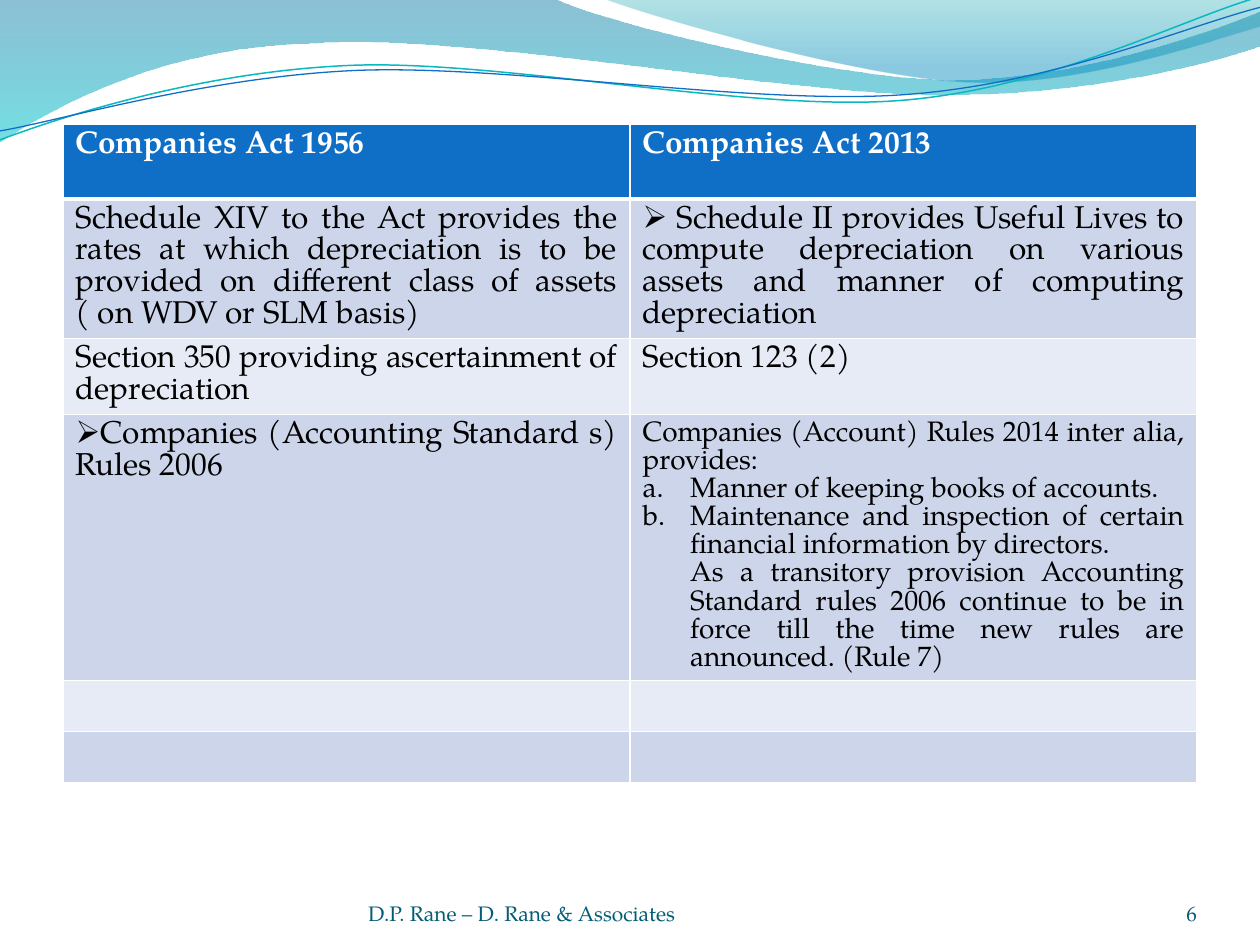
from dataclasses import dataclass
from typing import Optional

from lxml.etree import SubElement
from pptx import Presentation
from pptx.dml.color import RGBColor
from pptx.enum.text import MSO_ANCHOR as Anchor, PP_ALIGN as Align
from pptx.oxml.ns import qn
from pptx.util import Cm, Pt

FONT, BULLET_FONT = "TeX Gyre Pagella", "OpenSymbol"
BLUE, WHITE, BLACK, TEAL = "0F6FC6", "FFFFFF", "000000", "045D75"
BANDS = ("CCD5EA", "E7EBF5")


@dataclass
class Stop:
    position: float
    color: str
    opacity: int


@dataclass
class Wave:
    start: tuple
    segments: list
    stops: tuple = ()
    line_color: str = ""
    line_width: float = 0


@dataclass
class Entry:
    text: str
    size: float = 18
    bullet: Optional[str] = None
    numbering: Optional[str] = None
    margin: float = 0
    indent: float = 0


@dataclass
class Footer:
    text: str
    left: float
    width: float
    alignment: Align


WAVES = [
    Wave((0, 0), [
        [(11.18, -0.03)],
        [(12.09, 0.43), (16.87, 1.6), (19.25, 1.6)],
        [(21.67, 1.6), (24.33, 0.66), (25.4, 0.23)],
        [(25.43, 0.91)],
        [(24.97, 1.12), (22.1, 1.93), (18.95, 1.91)],
        [(15.8, 1.91), (9.7, 0.71), (6.53, 0.86)],
        [(3.28, 0.91), (1.17, 2.11), (-0.03, 2.87)],
        [(0, 0)],
    ], stops=(Stop(0, "0074A1", 45), Stop(1, "00C6CF", 55))),
    Wave((12.17, -0.03), [
        [(12.93, 0.28), (17.32, 1.57), (19.53, 1.65)],
        [(21.74, 1.75), (24.41, 0.81), (25.4, 0.53)],
        [(25.4, 0)],
        [(12.17, -0.03)],
    ], stops=(Stop(0, "00A1A9", 30), Stop(0.8, "008BBF", 45))),
    Wave((0, 2.82), [
        [(1.22, 2.36), (4.01, 1.45), (7.04, 1.32)],
        [(10.03, 1.19), (15.06, 2.26), (18.11, 2.03)],
        [(21.16, 1.8), (23.83, 0.38), (25.35, -0.05)],
    ], line_color="0AB8BF", line_width=0.85),
    Wave((0, 2.64), [
        [(1.19, 2.44), (4.17, 1.55), (7.19, 1.42)],
        [(10.24, 1.3), (15.16, 2.13), (18.21, 1.91)],
        [(21.23, 1.7), (23.9, 0.53), (25.4, 0.15)],
    ], line_color=BLUE, line_width=0.75),
]

LETTERED = dict(size=16, numbering="alphaLcPeriod", margin=0.96, indent=-0.96)
ROW_HEIGHTS = [1.5, 2.81, 1.53, 5.36, 1.03, 1.01]
ROWS = [
    [[Entry("Companies Act 1956")], [Entry("Companies Act 2013")]],
    [[Entry("Schedule XIV to the Act provides the rates at which depreciation is to be "
            "provided on different class of assets ( on WDV or SLM basis) ")],
     [Entry(" Schedule II provides Useful Lives to compute depreciation on various assets "
            "and manner of computing depreciation", bullet="➢")]],
    [[Entry("Section 350 providing ascertainment of depreciation")],
     [Entry("Section 123 (2)")]],
    [[Entry("Companies (Accounting Standard s) Rules 2006", bullet="➢")],
     [Entry("Companies (Account) Rules 2014 inter alia, provides:", size=16),
      Entry("Manner of keeping books of accounts.", **LETTERED),
      Entry("Maintenance and inspection of certain financial information by directors.",
            **LETTERED),
      Entry("As a transitory provision Accounting Standard rules 2006 continue to be in "
            "force till the time new rules are announced. (Rule 7)", size=16, margin=0.96)]],
    [[], []],
    [[], []],
]

FOOTERS = [
    Footer("D.P. Rane – D. Rane & Associates", 7.42, 9.32, Align.LEFT),
    Footer("6", 22.02, 2.11, Align.RIGHT),
]


def rgb(color: str) -> RGBColor:
    return RGBColor.from_string(color)


def bend_segments(shape, segments: list) -> None:
    path = next(shape._element.iter(qn("a:path")))
    for line, segment in zip(path.findall(qn("a:lnTo")), segments):
        if len(segment) == 1:
            continue
        curve = SubElement(path, qn("a:cubicBezTo"))
        for x, y in segment:
            SubElement(curve, qn("a:pt"), x=str(Cm(x) - shape.left), y=str(Cm(y) - shape.top))
        path.replace(line, curve)


def draw_wave(slide, wave: Wave) -> None:
    builder = slide.shapes.build_freeform(Cm(wave.start[0]), Cm(wave.start[1]), scale=1.0)
    ends = [(Cm(segment[-1][0]), Cm(segment[-1][1])) for segment in wave.segments]
    builder.add_line_segments(ends, close=bool(wave.stops))
    shape = builder.convert_to_shape()
    bend_segments(shape, wave.segments)
    shape.shadow.inherit = False
    if not wave.stops:
        shape.fill.background()
        shape.line.color.rgb = rgb(wave.line_color)
        shape.line.width = Pt(wave.line_width)
        return
    shape.line.fill.background()
    shape.fill.gradient()
    shape.fill.gradient_angle = 270
    for gradient_stop, stop in zip(shape.fill.gradient_stops, wave.stops):
        gradient_stop.position = stop.position
        gradient_stop.color.rgb = rgb(stop.color)
    for color, stop in zip(shape._element.iter(qn("a:srgbClr")), wave.stops):
        SubElement(color, qn("a:alpha"), val=str(stop.opacity * 1000))


def add_text(paragraph, text: str, size: float, color: str, bold: bool = False) -> None:
    run = paragraph.add_run()
    run.text = text
    run.font.name = FONT
    run.font.size = Pt(size)
    run.font.bold = bold
    run.font.color.rgb = rgb(color)


def format_list(paragraph, entry: Entry) -> None:
    properties = paragraph._p.get_or_add_pPr()
    properties.set("marL", str(Cm(entry.margin)))
    properties.set("indent", str(Cm(entry.indent)))
    if entry.bullet:
        SubElement(properties, qn("a:buFont"), typeface=BULLET_FONT)
        SubElement(properties, qn("a:buChar"), char=entry.bullet)
    elif entry.numbering:
        SubElement(properties, qn("a:buAutoNum"), type=entry.numbering)


def add_borders(cell, top: float, bottom: float) -> None:
    properties = cell._tc.get_or_add_tcPr()
    for side, width in (("L", 1), ("R", 1), ("T", top), ("B", bottom)):
        line = SubElement(properties, qn(f"a:ln{side}"), w=str(Pt(width)))
        SubElement(SubElement(line, qn("a:solidFill")), qn("a:srgbClr"), val=WHITE)


def draw_table(slide) -> None:
    table = slide.shapes.add_table(len(ROWS), 2, Cm(1.27), Cm(2.51), Cm(22.86),
                                   Cm(sum(ROW_HEIGHTS))).table
    for row_index, (height, contents) in enumerate(zip(ROW_HEIGHTS, ROWS)):
        table.rows[row_index].height = Cm(height)
        header = row_index == 0
        for column_index, entries in enumerate(contents):
            cell = table.cell(row_index, column_index)
            add_borders(cell, 3 if row_index == 1 else 1, 3 if header else 1)
            cell.fill.solid()
            cell.fill.fore_color.rgb = rgb(BLUE if header else BANDS[(row_index - 1) % 2])
            frame = cell.text_frame
            for entry_index, entry in enumerate(entries):
                paragraph = frame.add_paragraph() if entry_index else frame.paragraphs[0]
                paragraph.alignment = Align.JUSTIFY
                format_list(paragraph, entry)
                add_text(paragraph, entry.text, entry.size, WHITE if header else BLACK, header)


def draw_footer(slide, footer: Footer) -> None:
    frame = slide.shapes.add_textbox(Cm(footer.left), Cm(17.65), Cm(footer.width),
                                     Cm(1.02)).text_frame
    frame.word_wrap = True
    frame.vertical_anchor = Anchor.BOTTOM
    frame.margin_left = frame.margin_right = frame.margin_top = frame.margin_bottom = 0
    paragraph = frame.paragraphs[0]
    paragraph.alignment = footer.alignment
    add_text(paragraph, footer.text, 12, TEAL)


def main() -> None:
    presentation = Presentation()
    presentation.slide_width, presentation.slide_height = Cm(25.4), Cm(19.05)
    slide = presentation.slides.add_slide(presentation.slide_layouts[6])
    for wave in WAVES:
        draw_wave(slide, wave)
    draw_table(slide)
    for footer in FOOTERS:
        draw_footer(slide, footer)
    presentation.save("out.pptx")


if __name__ == "__main__":
    main()
